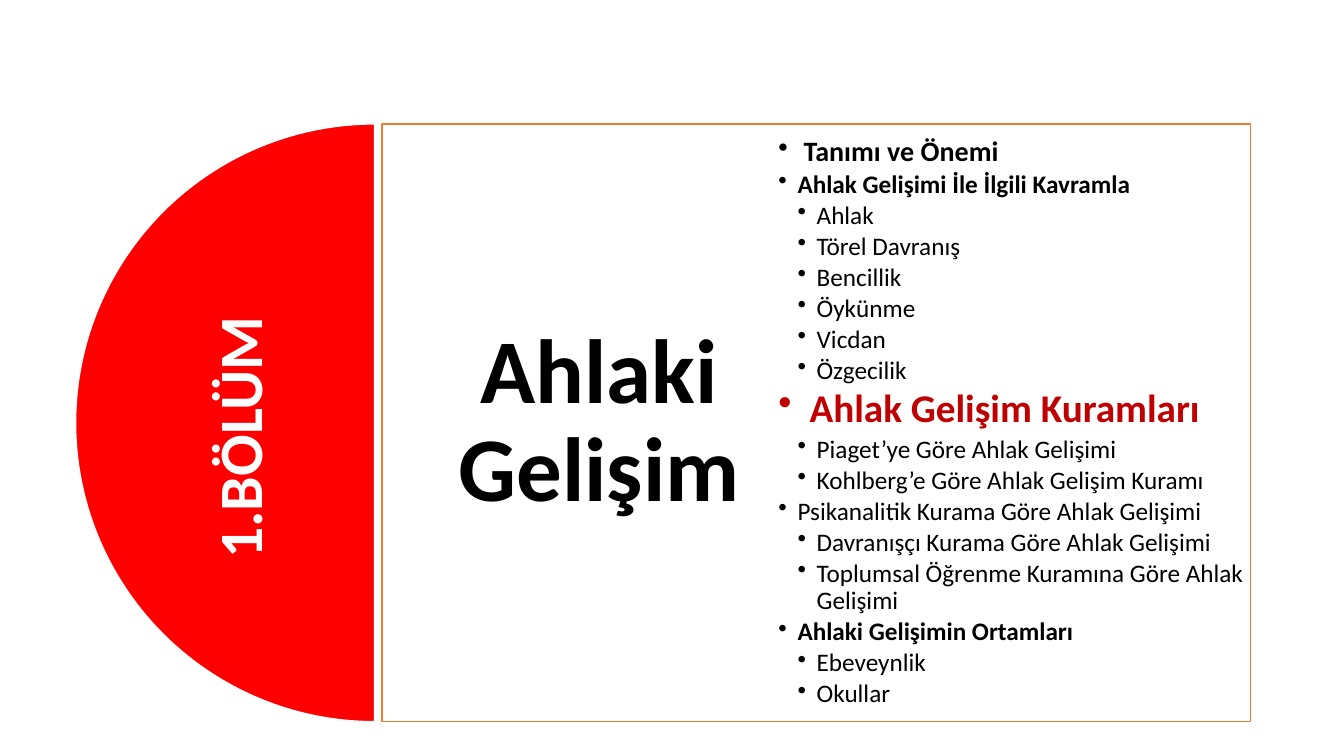
from lxml import etree
from pptx import Presentation
from pptx.dml.color import RGBColor
from pptx.enum import shapes, text
from pptx.oxml.ns import qn
from pptx.util import Inches, Pt

RED = RGBColor(0xFF, 0, 0)
DARK = RGBColor(0xC0, 0, 0)
ORANGE = RGBColor(0xED, 0x7D, 0x31)
WHITE = RGBColor(0xFF, 0xFF, 0xFF)
BLACK = RGBColor(0, 0, 0)

HEAD = dict(bold=True, dent=0.19)
SUB = dict(level=1, dent=0.19, left=0.38)
TOPICS = [
    ("Tanımı ve Önemi", dict(size=20, bold=True, dent=0.25)),
    ("Ahlak Gelişimi İle İlgili Kavramla", HEAD),
    ("Ahlak", SUB),
    ("Törel Davranış", SUB),
    ("Bencillik", SUB),
    ("Öykünme", SUB),
    ("Vicdan", SUB),
    ("Özgecilik", SUB),
    ("Ahlak Gelişim Kuramları",
     dict(size=28, color=DARK, bold=True, dent=0.31)),
    ("Piaget’ye Göre Ahlak Gelişimi", SUB),
    ("Kohlberg’e Göre Ahlak Gelişim Kuramı", SUB),
    ("Psikanalitik Kurama Göre Ahlak Gelişimi", dict(dent=0.19)),
    ("Davranışçı Kurama Göre Ahlak Gelişimi", SUB),
    ("Toplumsal Öğrenme Kuramına Göre Ahlak Gelişimi", SUB),
    ("Ahlaki Gelişimin Ortamları", HEAD),
    ("Ebeveynlik", SUB),
    ("Okullar", SUB),
]


def write(para, words, size=18, color=BLACK, bold=False, align=None,
          level=0, dent=0, left=None, after=0):
    """Fill a paragraph with words, bulleted when dent is set."""
    para.level = level
    para.alignment = align
    para.line_spacing = 0.9
    para.space_before = Pt(0)
    para.space_after = Pt(size * after)
    if dent:
        props = para._p.get_or_add_pPr()
        props.set("marL", str(Inches(left or dent)))
        props.set("indent", str(-Inches(dent)))
        etree.SubElement(props, qn("a:buChar")).set("char", "•")
    run = para.add_run()
    run.text = words
    for font in (para.font, run.font):
        font.name = "Calibri"
        font.size = Pt(size)
        font.bold = bold
        font.color.rgb = color


def shape(slide, kind, box, fill, line):
    """Add a plain preset shape."""
    item = slide.shapes.add_shape(kind, *map(Inches, box))
    item.shadow.inherit = False
    item.fill.solid()
    item.fill.fore_color.rgb = fill
    item.line.color.rgb = line
    item.line.width = Pt(1)
    return item


def frame(slide, box):
    """Add a wrapping, middle-anchored text box and return its frame."""
    body = slide.shapes.add_textbox(*map(Inches, box)).text_frame
    body.word_wrap = True
    body.vertical_anchor = text.MSO_ANCHOR.MIDDLE
    body.margin_left = body.margin_right = Inches(0.27)
    body.margin_top = body.margin_bottom = Inches(0.27)
    return body


def badge(slide, x, y, side):
    """Draw the red half disc."""
    pie = shape(slide, shapes.MSO_SHAPE.CHORD.PIE, (x, y, side, side),
                RED, WHITE)
    pie.adjustments[0] = 54
    pie.adjustments[1] = 162


def panel(slide, x, y, wide, high):
    """Draw the framed panel with its heading and topic list."""
    card = shape(slide, shapes.MSO_SHAPE.RECTANGLE, (x, y, wide, high),
                 WHITE, ORANGE)
    tint = card.fill._xPr.find(qn("a:solidFill"))[0]
    etree.SubElement(tint, qn("a:alpha")).set("val", "90000")
    head = frame(slide, (x, y, wide / 2, high))
    write(head.paragraphs[0], "Ahlaki Gelişim", size=65, bold=True,
          align=text.PP_ALIGN.CENTER)
    body = frame(slide, (x + 3.66, y, 5.59, high))
    for i, (words, style) in enumerate(TOPICS):
        para = body.add_paragraph() if i else body.paragraphs[0]
        write(para, words, after=0.15, **style)


def label(slide, x, y, wide, high):
    """Turn the title upright over the half disc."""
    title = slide.shapes.title
    title.left, title.top = Inches(x), Inches(y)
    title.width, title.height = Inches(wide), Inches(high)
    title.rotation = 270
    body = title.text_frame
    body.word_wrap = True
    body.auto_size = text.MSO_AUTO_SIZE.NONE
    body.vertical_anchor = text.MSO_ANCHOR.MIDDLE
    write(body.paragraphs[0], "1.BÖLÜM", size=44, color=WHITE, bold=True,
          align=text.PP_ALIGN.LEFT)
    slide.shapes._spTree.append(title._element)


def main():
    """Build and save the slide."""
    deck = Presentation()
    deck.slide_width, deck.slide_height = Inches(13.33), Inches(7.5)
    slide = deck.slides.add_slide(deck.slide_layouts[5])
    badge(slide, 0.75, 1.23, 5.93)
    panel(slide, 3.79, 1.23, 8.61, 5.93)
    label(slide, 0.41, 3.38, 3.99, 0.54)
    deck.save("out.pptx")


if __name__ == "__main__":
    main()
